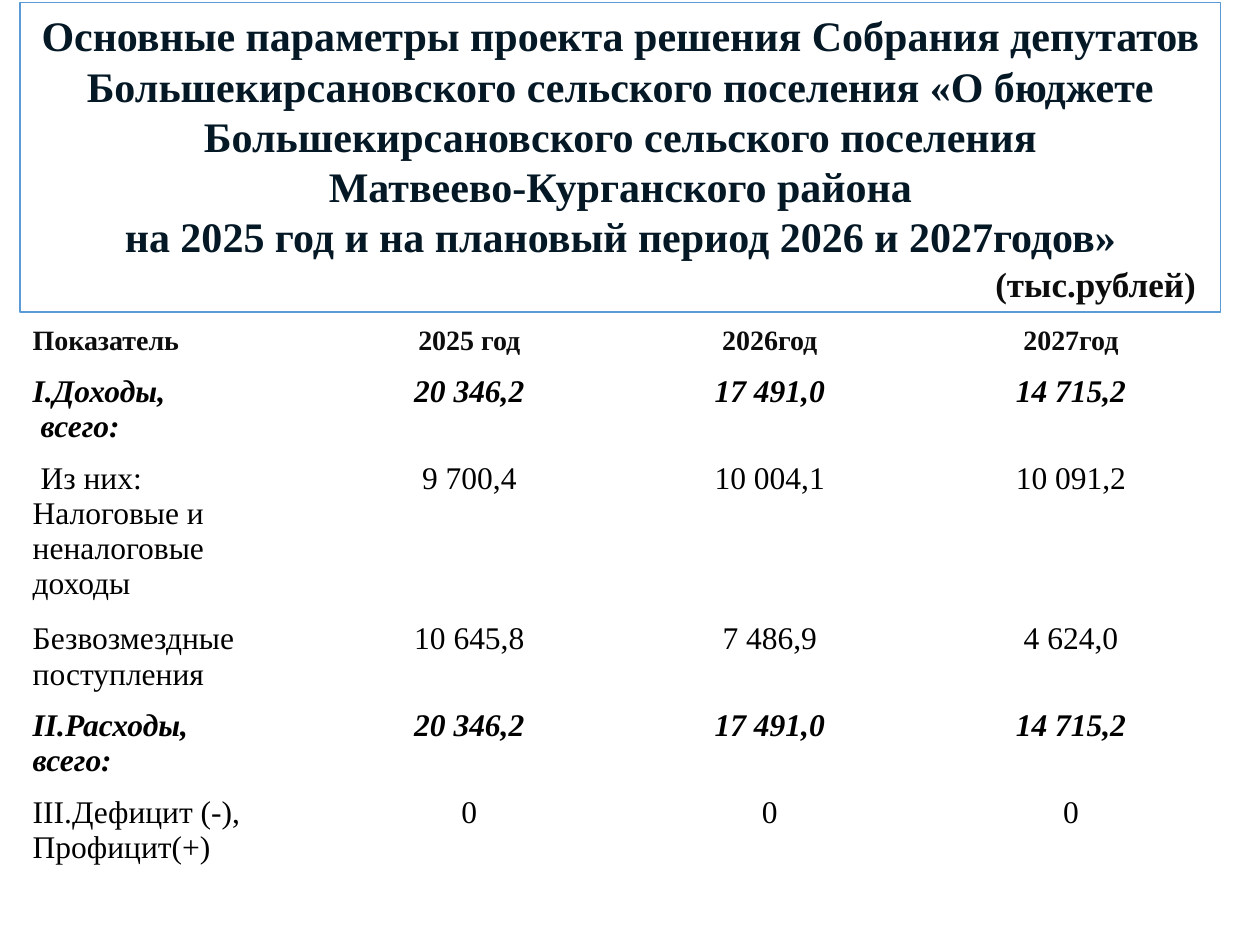
from lxml.etree import SubElement
from pptx import Presentation
from pptx.dml.color import RGBColor
from pptx.enum.text import MSO_ANCHOR, MSO_AUTO_SIZE, PP_ALIGN as ALIGN
from pptx.oxml.ns import qn
from pptx.util import Pt

NAVY = RGBColor(0x05, 0x18, 0x25)
NEAR_BLACK = RGBColor(0x0D, 0x0D, 0x0D)
BLACK = RGBColor(0, 0, 0)
WHITE = RGBColor(0xFF, 0xFF, 0xFF)
BLUE = RGBColor(0x5B, 0x9B, 0xD5)
FONT = "Times New Roman"


def write(paragraph, text, size=18, color=BLACK, bold=False, italic=False,
          align=ALIGN.LEFT, leading=20):
    paragraph.alignment = align
    paragraph.line_spacing = Pt(leading)
    paragraph.space_before = paragraph.space_after = Pt(0)
    run = paragraph.add_run()
    run.text = text
    run.font.name, run.font.size = FONT, Pt(size)
    run.font.bold, run.font.italic = bold, italic
    run.font.color.rgb = color


def add_borders(cell, bottom_width):
    properties = cell._tc.get_or_add_tcPr()
    for side, width in (("L", 1), ("R", 1), ("T", 1), ("B", bottom_width)):
        line = SubElement(properties, qn(f"a:ln{side}"), w=str(Pt(width)))
        fill = SubElement(line, qn("a:solidFill"))
        SubElement(fill, qn("a:srgbClr"), val=str(WHITE))


prs = Presentation()
prs.slide_width, prs.slide_height = Pt(720), Pt(540)
slide = prs.slides.add_slide(prs.slide_layouts[5])

# Framed heading
heading = slide.shapes.title
heading.left, heading.top = Pt(11.5), Pt(1.5)
heading.width, heading.height = Pt(686), Pt(177)
heading.fill.solid()
heading.fill.fore_color.rgb = WHITE
heading.line.color.rgb = BLUE
heading.line.width = Pt(1)
frame = heading.text_frame
frame.word_wrap = True
frame.auto_size = MSO_AUTO_SIZE.NONE
frame.vertical_anchor = MSO_ANCHOR.MIDDLE

heading_lines = [
    "Основные параметры проекта решения Собрания депутатов "
    "Большекирсановского сельского поселения «О бюджете "
    "Большекирсановского сельского поселения",
    "Матвеево-Курганского района",
    "на 2025 год и на плановый период 2026 и 2027годов»",
]
for i, text in enumerate(heading_lines):
    paragraph = frame.add_paragraph() if i else frame.paragraphs[0]
    write(paragraph, text, size=24, color=NAVY, bold=True,
          align=ALIGN.CENTER, leading=28.7)

# Unit of measure, set in from the right edge
unit = frame.add_paragraph()
write(unit, "(тыс.рублей)", size=20, color=NEAR_BLACK, bold=True,
      align=ALIGN.RIGHT, leading=25)
unit._p.get_or_add_pPr().set("marR", str(Pt(7)))

# Budget figures
HEADER = dict(size=16, color=NEAR_BLACK, bold=True, leading=18.4)
TOTAL = dict(bold=True, italic=True)
PLAIN = {}
budget = [
    (28, HEADER, ["Показатель", "2025 год", "2026год", "2027год"]),
    (49.7, TOTAL, ["I.Доходы,\n всего:", "20 346,2", "17 491,0", "14 715,2"]),
    (92, PLAIN, [" Из них:\nНалоговые и неналоговые доходы",
                 "9 700,4", "10 004,1", "10 091,2"]),
    (49.7, PLAIN, ["Безвозмездные поступления", "10 645,8", "7 486,9", "4 624,0"]),
    (49.7, TOTAL, ["II.Расходы,\nвсего:", "20 346,2", "17 491,0", "14 715,2"]),
    (49.7, PLAIN, ["III.Дефицит (-),\nПрофицит(+)", "0", "0", "0"]),
]
column_widths = [171.4, 170.6, 172.8, 171.4]
table = slide.shapes.add_table(len(budget), len(column_widths), Pt(11.5), Pt(182),
                               Pt(sum(column_widths)), Pt(318.8)).table
table.first_row = table.horz_banding = False
for column, width in zip(table.columns, column_widths):
    column.width = Pt(width)

for r, (height, style, values) in enumerate(budget):
    table.rows[r].height = Pt(height)
    for c, value in enumerate(values):
        cell = table.cell(r, c)
        cell.margin_right = Pt(7.2 if c else 10)
        add_borders(cell, 1 if r else 3)
        cell.fill.background()
        for i, text in enumerate(value.split("\n")):
            paragraphs = cell.text_frame
            paragraph = paragraphs.add_paragraph() if i else paragraphs.paragraphs[0]
            write(paragraph, text, align=ALIGN.CENTER if c else ALIGN.LEFT, **style)

prs.save("out.pptx")
